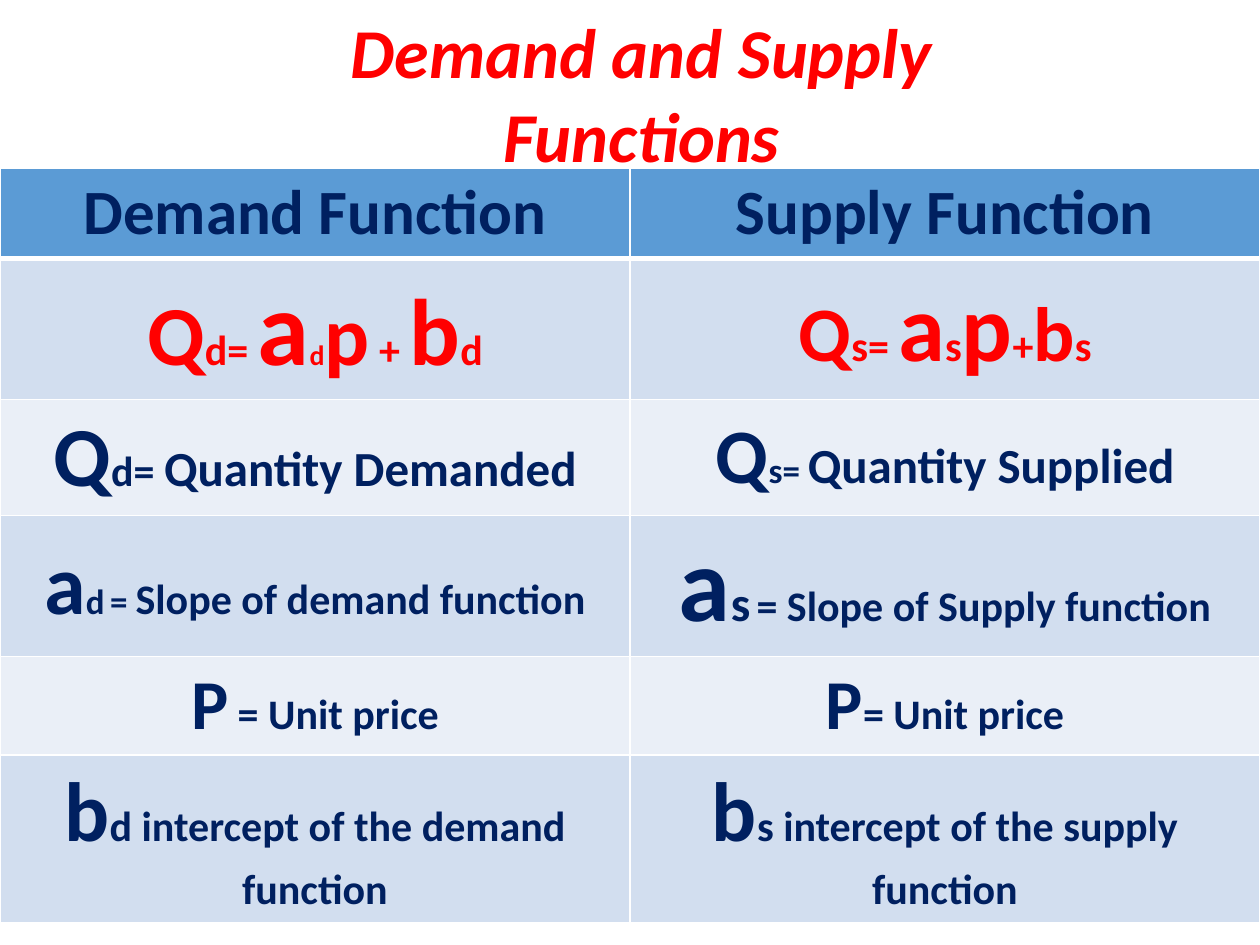
from dataclasses import dataclass

from lxml.etree import SubElement
from pptx import Presentation
from pptx.dml.color import RGBColor
from pptx.enum.text import MSO_ANCHOR, MSO_AUTO_SIZE, PP_ALIGN
from pptx.oxml.ns import qn
from pptx.slide import Slide
from pptx.table import _Cell
from pptx.text.text import _Paragraph
from pptx.util import Pt


@dataclass(frozen=True)
class Theme:
    font: str = "Calibri"
    red: str = "FF0000"
    navy: str = "002060"
    border: str = "FFFFFF"
    header: str = "5B9BD5"
    bands: tuple[str, str] = ("D2DEEF", "EAEFF7")
    title: int = 40
    heading: int = 36
    thin: int = 1
    thick: int = 3


@dataclass(frozen=True)
class Span:
    text: str
    size: int


@dataclass(frozen=True)
class Row:
    height: float
    demand: tuple[Span, ...]
    supply: tuple[Span, ...]
    color: str
    fill: str


THEME = Theme()
DARK, LIGHT = THEME.bands

ROWS = (
    Row(51.8, (Span("Demand Function", THEME.heading),),
        (Span("Supply Function", THEME.heading),), THEME.navy, THEME.header),
    Row(80.6,
        (Span("Q", 48), Span("d= ", 24), Span("a", 60), Span("d", 16),
         Span("p", 48), Span(" + ", 24), Span("b", 54), Span("d", 24)),
        (Span("Q", 44), Span("s= ", 24), Span("a", 54), Span("s", 24),
         Span("p", 54), Span("+", 24), Span("b", 44), Span("s", 24)),
        THEME.red, DARK),
    Row(66.2,
        (Span("Q", 48), Span("d= ", 24), Span("Quantity Demanded", 28)),
        (Span("Q", 44), Span("s= ", 20), Span("Quantity Supplied", 28)),
        THEME.navy, LIGHT),
    Row(80.6,
        (Span("a", 48), Span("d", 20), Span(" ", 14), Span("= ", 20),
         Span("Slope of demand function", 24)),
        (Span("a", 60), Span("s", 28), Span(" ", 16),
         Span("= Slope of Supply function", 24)),
        THEME.navy, DARK),
    Row(56.2, (Span("P", 40), Span(" = Unit price", 24)),
        (Span("P", 40), Span("= Unit price", 24)), THEME.navy, LIGHT),
    Row(95.8, (Span("b", 48), Span("d intercept of the demand function", 24)),
        (Span("b", 48), Span("s intercept of the supply function", 24)),
        THEME.navy, DARK),
)


def write_text(para: _Paragraph, text: str, *, size: int, color: str,
               italic: bool = False) -> None:
    para.alignment = PP_ALIGN.CENTER
    span = para.add_run()
    span.text = text
    span.font.name = THEME.font
    span.font.size = Pt(size)
    span.font.bold = True
    span.font.italic = italic
    span.font.color.rgb = RGBColor.from_string(color)


def set_borders(cell: _Cell, top: int, bottom: int) -> None:
    properties = cell._tc.get_or_add_tcPr()
    widths = {"L": THEME.thin, "R": THEME.thin, "T": top, "B": bottom}
    for side, width in widths.items():
        line = SubElement(properties, qn(f"a:ln{side}"), w=str(Pt(width)))
        fill = SubElement(line, qn("a:solidFill"))
        SubElement(fill, qn("a:srgbClr"), val=THEME.border)


def draw_cell(cell: _Cell, spans: tuple[Span, ...], row: Row, index: int) -> None:
    set_borders(cell,
                top=THEME.thick if index == 1 else THEME.thin,
                bottom=THEME.thick if index == 0 else THEME.thin)
    cell.fill.solid()
    cell.fill.fore_color.rgb = RGBColor.from_string(row.fill)
    cell.vertical_anchor = MSO_ANCHOR.MIDDLE
    for span in spans:
        write_text(cell.text_frame.paragraphs[0], span.text,
                   size=span.size, color=row.color)


def draw_title(page: Slide) -> None:
    box = page.shapes.title
    box.left, box.top, box.width, box.height = Pt(126), Pt(1.5), Pt(481), Pt(99)
    frame = box.text_frame
    frame.word_wrap = True
    frame.auto_size = MSO_AUTO_SIZE.NONE
    frame.vertical_anchor = MSO_ANCHOR.TOP
    write_text(frame.paragraphs[0], "Demand and Supply Functions",
               size=THEME.title, color=THEME.red, italic=True)


def draw_functions(page: Slide) -> None:
    height = sum(row.height for row in ROWS)
    table = page.shapes.add_table(len(ROWS), 2, Pt(0), Pt(96),
                                  Pt(720), Pt(height)).table
    for index, row in enumerate(ROWS):
        table.rows[index].height = Pt(row.height)
        for column, spans in enumerate((row.demand, row.supply)):
            draw_cell(table.cell(index, column), spans, row, index)


def main() -> None:
    deck = Presentation()
    deck.slide_width, deck.slide_height = Pt(720), Pt(540)
    page = deck.slides.add_slide(deck.slide_layouts[5])
    draw_title(page)
    draw_functions(page)
    deck.save("out.pptx")


if __name__ == "__main__":
    main()
